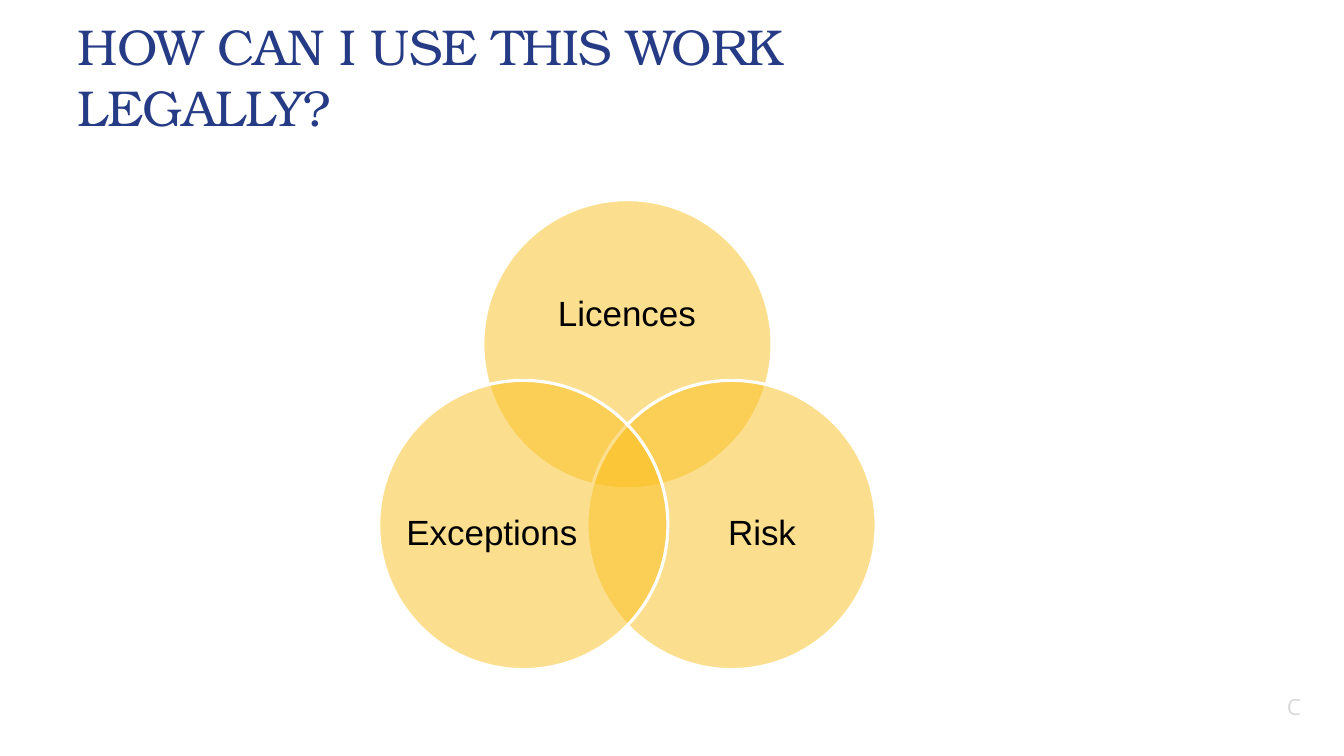
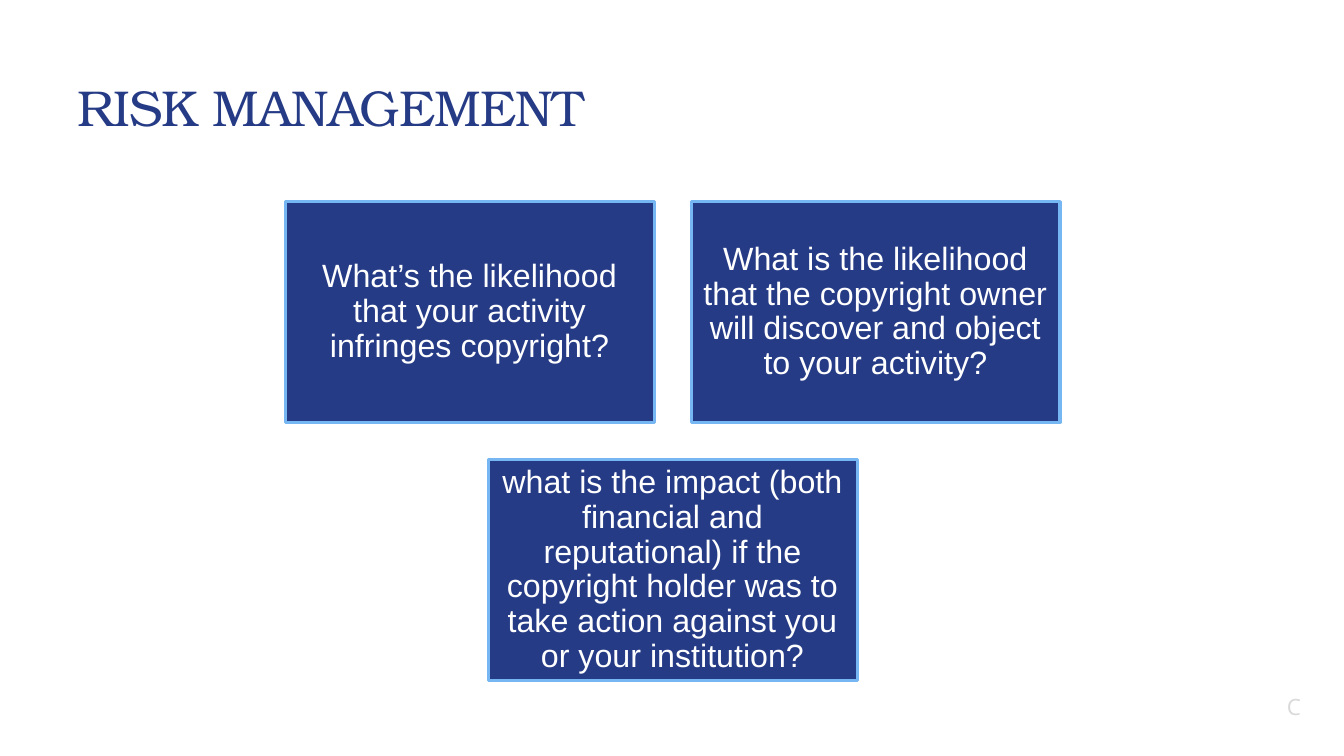
from dataclasses import dataclass
from lxml.etree import SubElement
from pptx import Presentation
from pptx.dml.color import RGBColor
from pptx.enum.shapes import MSO_SHAPE
from pptx.enum.text import MSO_ANCHOR, MSO_AUTO_SIZE, PP_ALIGN
from pptx.oxml.ns import qn
from pptx.util import Pt


@dataclass(frozen=True)
class Theme:
    navy: str = "263B86"
    gold: str = "FBC01E"
    sky: str = "76B6F2"
    white: str = "FFFFFF"
    black: str = "000000"
    grey: str = "D9D9D9"
    serif: str = "TeX Gyre Bonum"
    sans: str = "Arial"
    mark: str = "Open Sans"
    head: int = 36
    label: int = 25
    body: int = 23
    small: int = 16
    edge: float = 2.25


theme = Theme()


def write(shape, text, face, size, color, align, anchor, pad, space=1.0):
    frame = shape.text_frame
    frame.text = text
    frame.word_wrap = True
    frame.auto_size = MSO_AUTO_SIZE.NONE
    frame.vertical_anchor = anchor
    frame.margin_left = frame.margin_right = Pt(pad)
    frame.margin_top = frame.margin_bottom = Pt(min(pad, 3.6) if space == 1 else pad)
    line = frame.paragraphs[0]
    line.alignment = align
    line.line_spacing = space
    font = line.runs[0].font
    font.name = face
    font.size = Pt(size)
    font.color.rgb = RGBColor.from_string(color)


def draw(slide, kind, left, top, width, height, fill, edge):
    shape = slide.shapes.add_shape(kind, Pt(left), Pt(top), Pt(width), Pt(height))
    shape.shadow.inherit = False
    shape.fill.solid()
    shape.fill.fore_color.rgb = RGBColor.from_string(fill)
    shape.line.color.rgb = RGBColor.from_string(edge)
    shape.line.width = Pt(theme.edge)
    return shape


deck = Presentation()
deck.slide_width, deck.slide_height = Pt(960), Pt(540)

slides = []
for text in ("HOW CAN I USE THIS WORK LEGALLY?", "RISK MANAGEMENT"):
    slide = deck.slides.add_slide(deck.slide_layouts[5])
    title = slide.shapes.title
    title.left, title.top, title.width, title.height = Pt(48.24), Pt(12.24), Pt(607.7), Pt(88.6)
    write(title, text, theme.serif, theme.head, theme.navy, PP_ALIGN.LEFT, MSO_ANCHOR.BOTTOM, 7.2)
    run = title.text_frame.paragraphs[0].runs[0]
    run._r.get_or_add_rPr().set("spc", "-60")
    mark = slide.shapes.add_textbox(Pt(912.2), Pt(491.8), Pt(29.5), Pt(26.6))
    write(mark, "C", theme.mark, theme.small, theme.grey, PP_ALIGN.LEFT, MSO_ANCHOR.TOP, 7.2)
    slides.append(slide)

venn, risk = slides

size = 206.6
mid, top = 448.2, 142.6
shift, drop = size * 0.36, size * 0.625
rings = (
    ("Licences", 0, 0, 372.2, 178.6, 151.2, 92.9),
    ("Risk", shift, drop, 482.4, 324.7, 123.8, 113.8),
    ("Exceptions", -shift, drop, 289.4, 324.7, 123.8, 113.8),
)
for text, right, down, *area in rings:
    ring = draw(venn, MSO_SHAPE.OVAL, mid - size / 2 + right, top + down, size, size, theme.gold, theme.white)
    tint = ring.fill._xPr.find(qn("a:solidFill"))[0]
    SubElement(tint, qn("a:alpha")).set("val", "50000")
    label = venn.shapes.add_textbox(*map(Pt, area))
    write(label, text, theme.sans, theme.label, theme.black, PP_ALIGN.CENTER, MSO_ANCHOR.MIDDLE, 0, 0.9)

wide, high, gap = 263.5, 157.8, 26.4
left, top = 203.8, 144
cards = (
    ("What’s the likelihood that your activity infringes copyright?", 0, 0),
    ("What is the likelihood that the copyright owner will discover and object to your activity?", 1, 0),
    (
        "what is the impact (both financial and reputational) if the copyright holder "
        "was to take action against you or your institution?",
        0.5,
        1,
    ),
)
for text, col, row in cards:
    x = left + col * (wide + gap)
    y = top + row * (high + gap)
    card = draw(risk, MSO_SHAPE.RECTANGLE, x, y, wide, high, theme.navy, theme.sky)
    write(card, text, theme.sans, theme.body, theme.white, PP_ALIGN.CENTER, MSO_ANCHOR.MIDDLE, 7.2, 0.9)

deck.save("out.pptx")
